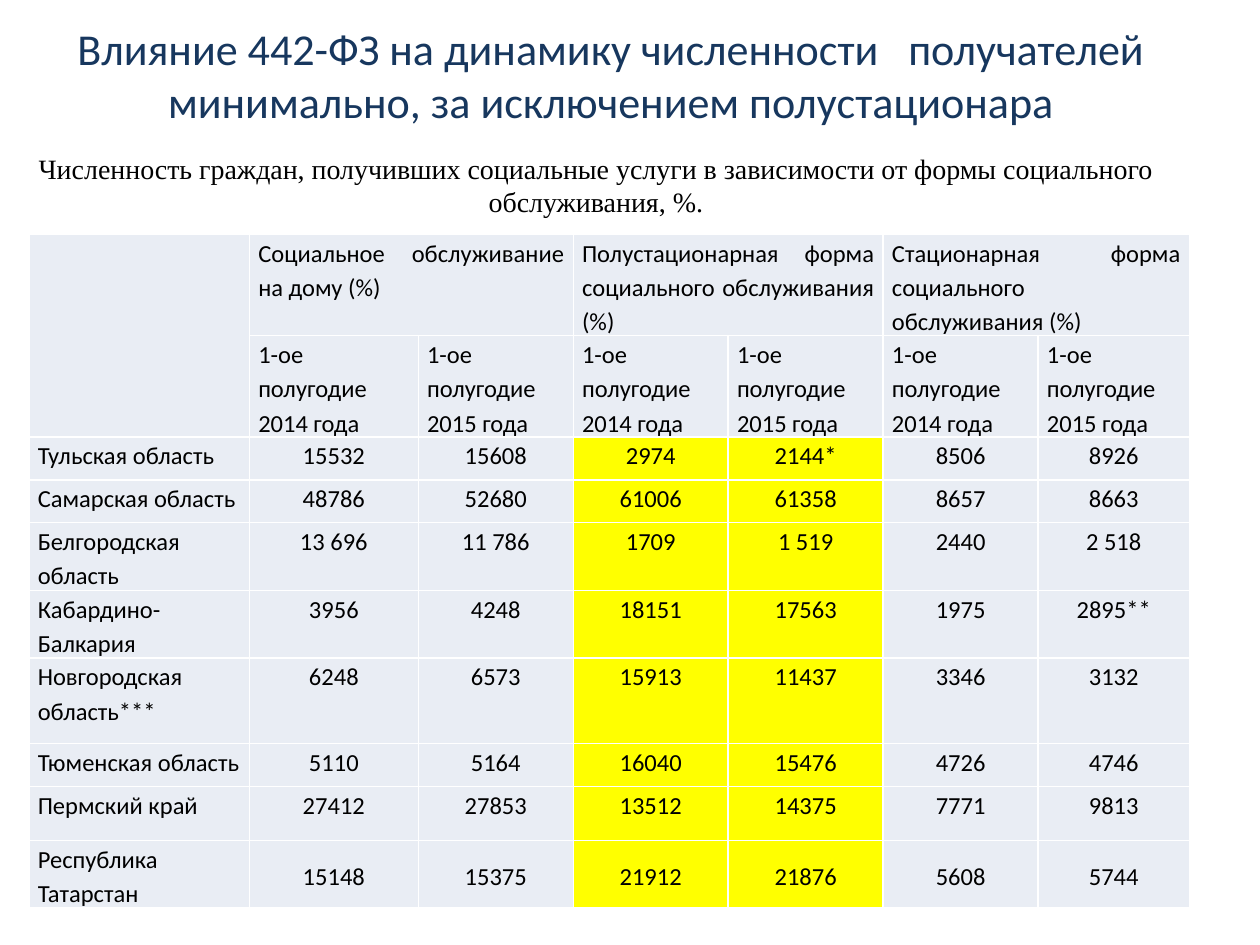
from lxml import etree
from pptx import Presentation
from pptx.dml.color import RGBColor
from pptx.enum.text import MSO_ANCHOR, PP_ALIGN
from pptx.oxml.ns import qn
from pptx.util import Inches, Pt

TOP, MIDDLE = MSO_ANCHOR.TOP, MSO_ANCHOR.MIDDLE
CENTER, JUSTIFY = PP_ALIGN.CENTER, PP_ALIGN.JUSTIFY

NAVY = RGBColor(0x17, 0x37, 0x5E)
BLACK = RGBColor(0, 0, 0)
PALE = RGBColor(0xE9, 0xED, 0xF4)
YELLOW = RGBColor(0xFF, 0xFF, 0)
WHITE = RGBColor(0xFF, 0xFF, 0xFF)

TITLE = ("Влияние 442-ФЗ на динамику численности   получателей "
         "минимально, за исключением полустационара")
SUBTITLE = ("Численность граждан, получивших социальные услуги "
            "в зависимости от формы социального обслуживания, %.")
FORMS = [
    "Социальное обслуживание на дому (%)",
    "Полустационарная форма социального обслуживания (%)",
    "Стационарная форма социального обслуживания (%)",
]
YEARS = [2014, 2015]
REGIONS = [
    ("Тульская область", "15532", "15608", "2974", "2144*", "8506", "8926"),
    ("Самарская область", "48786", "52680", "61006", "61358", "8657", "8663"),
    ("Белгородская область", "13 696", "11 786", "1709", "1 519", "2440", "2 518"),
    ("Кабардино-Балкария", "3956", "4248", "18151", "17563", "1975", "2895**"),
    ("Новгородская область***", "6248", "6573", "15913", "11437", "3346", "3132"),
    ("Тюменская область", "5110", "5164", "16040", "15476", "4726", "4746"),
    ("Пермский край", "27412", "27853", "13512", "14375", "7771", "9813"),
    ("Республика Татарстан", "15148", "15375", "21912", "21876", "5608", "5744"),
]
COL_WIDTHS = [1.75, 1.34, 1.23, 1.23, 1.23, 1.23, 1.2]
ROW_HEIGHTS = [0.62, 0.62, 0.34, 0.34, 0.34, 0.48, 0.68, 0.34, 0.43, 0.34]
HEADER_ROWS = 2
HIGHLIGHT_COLS = (3, 4)


def add_run(p, text, size, font, color):
    r = p.add_run()
    r.text = text
    r.font.size = Pt(size)
    r.font.name = font
    r.font.color.rgb = color


def add_heading(s, box, text, size, font, color, anchor):
    tf = s.shapes.add_textbox(*map(Inches, box)).text_frame
    tf.word_wrap = True
    tf.vertical_anchor = anchor
    p = tf.paragraphs[0]
    p.alignment = CENTER
    add_run(p, text, size, font, color)


def set_borders(cell, color, width):
    """Draw all four cell edges; edges must precede the fill in tcPr."""
    tc_pr = cell._tc.get_or_add_tcPr()
    for i, edge in enumerate(("a:lnL", "a:lnR", "a:lnT", "a:lnB")):
        ln = etree.Element(qn(edge), w=str(Pt(width)))
        fill = etree.SubElement(ln, qn("a:solidFill"))
        etree.SubElement(fill, qn("a:srgbClr"), val=str(color))
        tc_pr.insert(i, ln)


def style_cell(cell, fill):
    cell.fill.solid()
    cell.fill.fore_color.rgb = fill
    cell.margin_left = cell.margin_right = Inches(0.07)
    cell.margin_top = cell.margin_bottom = 0
    set_borders(cell, WHITE, 1)


def write_cell(cell, text, align):
    p = cell.text_frame.paragraphs[0]
    p.alignment = align
    p.line_spacing = 1.15
    add_run(p, text, 14, "Calibri", BLACK)


def add_regions_table(s, box):
    frame = s.shapes.add_table(len(ROW_HEIGHTS), len(COL_WIDTHS), *map(Inches, box))
    table = frame.table
    for col, width in zip(table.columns, COL_WIDTHS):
        col.width = Inches(width)
    for row, height in zip(table.rows, ROW_HEIGHTS):
        row.height = Inches(height)

    for i, row in enumerate(table.rows):
        for j, cell in enumerate(row.cells):
            marked = i >= HEADER_ROWS and j in HIGHLIGHT_COLS
            style_cell(cell, YELLOW if marked else PALE)

    table.cell(0, 0).merge(table.cell(1, 0))
    for i, form in enumerate(FORMS):
        first = 1 + i * len(YEARS)
        table.cell(0, first).merge(table.cell(0, first + len(YEARS) - 1))
        write_cell(table.cell(0, first), form, JUSTIFY)
        for j, year in enumerate(YEARS):
            write_cell(table.cell(1, first + j), f"1-ое полугодие {year} года", JUSTIFY)

    for i, region in enumerate(REGIONS, HEADER_ROWS):
        for j, text in enumerate(region):
            write_cell(table.cell(i, j), text, CENTER if j else JUSTIFY)
    for j in range(1, len(COL_WIDTHS)):
        table.cell(len(ROW_HEIGHTS) - 1, j).vertical_anchor = MIDDLE


def main():
    prs = Presentation()
    prs.slide_width, prs.slide_height = Inches(10), Inches(7.5)
    s = prs.slides.add_slide(prs.slide_layouts[6])
    add_heading(s, (0.2, 0.03, 9.3, 1.12), TITLE, 25.2, "Calibri", NAVY, MIDDLE)
    add_regions_table(s, (0.23, 1.86, 9.21, 5.35))
    add_heading(s, (0.2, 1.15, 9.06, 0.94), SUBTITLE, 16, "Times New Roman", BLACK, TOP)
    prs.save("out.pptx")


if __name__ == "__main__":
    main()
